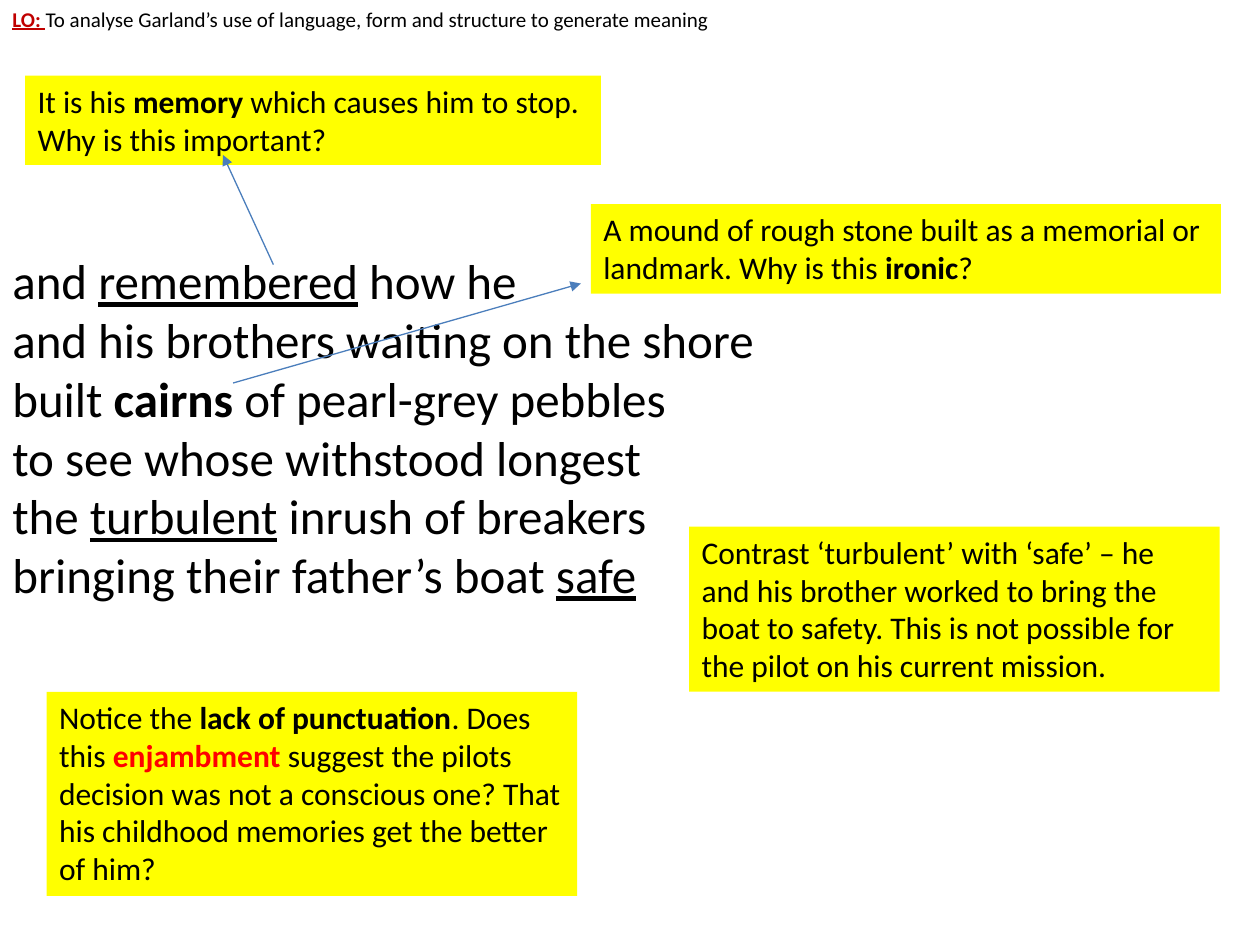
from dataclasses import dataclass
from typing import NamedTuple, Optional

from lxml import etree
from pptx import Presentation, util as u
from pptx.dml import color
from pptx.enum import shapes, text
from pptx.oxml import ns

COLUMNS, ROWS = 100, 75
SLIDE_WIDTH, SLIDE_HEIGHT = u.Inches(10), u.Inches(7.5)


@dataclass(frozen=True)
class Theme:
    font: str = "Calibri"
    ink: str = "000000"
    objective: str = "C00000"
    alert: str = "FF0000"
    paper: str = "FFFFFF"
    highlight: str = "FFFF00"
    arrow: str = "4B7EBC"
    paper_opacity: int = 88
    objective_size: int = 12
    note_size: int = 18
    poem_size: int = 28
    arrow_width: float = 0.75


THEME = Theme()


class Span(NamedTuple):
    words: str
    bold: bool = False
    underline: bool = False
    ink: str = THEME.ink


class Area(NamedTuple):
    column: float
    row: float
    columns: float
    rows: float


class Arrow(NamedTuple):
    from_column: float
    from_row: float
    to_column: float
    to_row: float


@dataclass(frozen=True)
class Panel:
    area: Area
    lines: list[list[Span]]
    size: int = THEME.note_size
    fill: str = THEME.highlight
    opacity: int = 100
    hanging: float = 0
    arrow: Optional[Arrow] = None


OBJECTIVE = Panel(
    Area(0, 0, 100, 3),
    [[Span("LO: ", True, True, THEME.objective),
      Span("To analyse Garland’s use of language, form and structure to generate meaning")]],
    THEME.objective_size, THEME.paper, THEME.paper_opacity, hanging=3.1)

POEM = Panel(
    Area(0, 19.4, 100, 29.3),
    [[Span("and "), Span("remembered", underline=True), Span(" how he")],
     [Span("and his brothers waiting on the shore")],
     [Span("built "), Span("cairns", bold=True), Span(" of pearl-grey pebbles")],
     [Span("to see whose withstood longest")],
     [Span("the "), Span("turbulent", underline=True), Span(" inrush of breakers")],
     [Span("bringing their father’s boat "), Span("safe", underline=True)]],
    THEME.poem_size, THEME.paper, THEME.paper_opacity)

MEMORY = Panel(
    Area(2, 6, 45.7, 7.1),
    [[Span("It is his "), Span("memory", bold=True),
      Span(" which causes him to stop. Why is this important?")]],
    arrow=Arrow(21.7, 21, 17.7, 12.3))

CAIRNS = Panel(
    Area(46.9, 16.2, 50, 7.1),
    [[Span("A mound of rough stone built as a memorial or landmark. Why is this "),
      Span("ironic", bold=True), Span("?")]],
    arrow=Arrow(18.5, 30.4, 46.1, 22.5))

CONTRAST = Panel(
    Area(54.7, 41.8, 42.1, 13.1),
    [[Span("Contrast ‘turbulent’ with ‘safe’ – he and his brother worked to bring the "
           "boat to safety. This is not possible for the pilot on his current mission.")]])

ENJAMBMENT = Panel(
    Area(3.7, 54.9, 42.1, 16.2),
    [[Span("Notice the "), Span("lack of punctuation", bold=True), Span(". Does this "),
      Span("enjambment ", bold=True, ink=THEME.alert),
      Span("suggest the pilots decision was not a conscious one? "
           "That his childhood memories get the better of him?")]])


def across(columns: float) -> int:
    """Turn grid columns into a length."""
    return round(SLIDE_WIDTH * columns / COLUMNS)


def down(rows: float) -> int:
    """Turn grid rows into a length."""
    return round(SLIDE_HEIGHT * rows / ROWS)


def draw_panel(slide, panel: Panel) -> None:
    """Draw a filled text panel, followed by its arrow if it has one."""
    area = panel.area
    box = slide.shapes.add_textbox(across(area.column), down(area.row),
                                   across(area.columns), down(area.rows))
    box.fill.solid()
    box.fill.fore_color.rgb = color.RGBColor.from_string(panel.fill)
    if panel.opacity < 100:
        tint = next(box.fill._xPr.iter(ns.qn("a:srgbClr")))
        etree.SubElement(tint, ns.qn("a:alpha"), val=str(panel.opacity * 1000))
    frame = box.text_frame
    frame.word_wrap = True
    frame.auto_size = text.MSO_AUTO_SIZE.SHAPE_TO_FIT_TEXT
    paragraph = frame.paragraphs[0]
    if panel.hanging:
        indent = across(panel.hanging)
        properties = paragraph._p.get_or_add_pPr()
        properties.set("marL", str(indent))
        properties.set("indent", str(-indent))
    for number, line in enumerate(panel.lines):
        if number:
            paragraph.add_line_break()
        for span in line:
            add_span(paragraph, span, panel.size)
    if panel.arrow:
        draw_arrow(slide, panel.arrow)


def add_span(paragraph, span: Span, size: int) -> None:
    """Add one styled run to a paragraph."""
    run = paragraph.add_run()
    run.text = span.words
    run.font.name = THEME.font
    run.font.size = u.Pt(size)
    run.font.bold = span.bold
    run.font.underline = span.underline
    run.font.color.rgb = color.RGBColor.from_string(span.ink)


def draw_arrow(slide, arrow: Arrow) -> None:
    """Draw a thin arrow from a word of the poem to its note."""
    connector = slide.shapes.add_connector(
        shapes.MSO_CONNECTOR.STRAIGHT, across(arrow.from_column), down(arrow.from_row),
        across(arrow.to_column), down(arrow.to_row))
    connector.line.color.rgb = color.RGBColor.from_string(THEME.arrow)
    connector.line.width = u.Pt(THEME.arrow_width)
    etree.SubElement(connector.line._get_or_add_ln(), ns.qn("a:tailEnd"), type="triangle")
    etree.SubElement(connector._element.spPr, ns.qn("a:effectLst"))


def main() -> None:
    """Build the annotated poem slide and save it."""
    deck = Presentation()
    deck.slide_width, deck.slide_height = SLIDE_WIDTH, SLIDE_HEIGHT
    slide = deck.slides.add_slide(deck.slide_layouts[6])
    for panel in (OBJECTIVE, POEM, MEMORY, CAIRNS, CONTRAST, ENJAMBMENT):
        draw_panel(slide, panel)
    deck.save("out.pptx")


if __name__ == "__main__":
    main()
